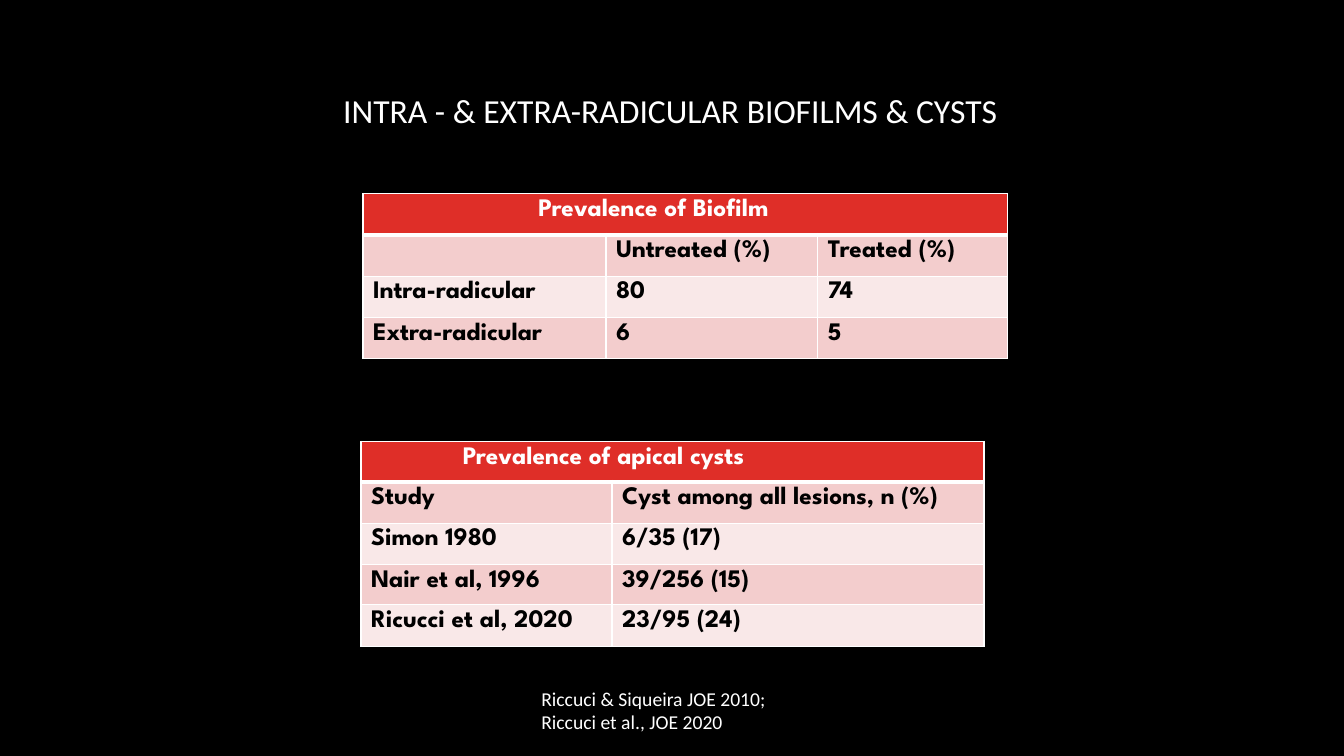
"""Build the slide on the prevalence of biofilms and apical cysts."""
from lxml import etree
from pptx import Presentation
from pptx.dml.color import RGBColor
from pptx.enum.text import MSO_ANCHOR, PP_ALIGN
from pptx.oxml.ns import qn
from pptx.util import Inches, Pt

MIDDLE, LEFT, RIGHT = MSO_ANCHOR.MIDDLE, PP_ALIGN.LEFT, PP_ALIGN.RIGHT
WHITE, BLACK, RED = "FFFFFF", "000000", "DF2E28"
BANDS = ["F3CDCD", "F9E8E8"]
TALL, SHORT = 0.41, 0.33
THIN, THICK = 1, 3


def color(hex_code):
    return RGBColor.from_string(hex_code)


def write(paragraph, text, size, font, hex_code, bold=False):
    run = paragraph.add_run()
    run.text = text
    run.font.size = Pt(size)
    run.font.name = font
    run.font.bold = bold
    run.font.color.rgb = color(hex_code)


prs = Presentation()
prs.slide_width, prs.slide_height = Inches(13.33), Inches(7.5)
slide = prs.slides.add_slide(prs.slide_layouts[6])
slide.background.fill.solid()
slide.background.fill.fore_color.rgb = color(BLACK)

captions = [
    ((3.25, 0.79, 6.74, 0.61), 24, RIGHT, True,
     ["INTRA - & EXTRA-RADICULAR BIOFILMS & CYSTS"]),
    ((5.27, 6.76, 2.45, 0.57), 14, LEFT, False,
     ["Riccuci & Siqueira JOE 2010;", "Riccuci et al., JOE 2020"]),
]
for box, size, alignment, wraps, lines in captions:
    frame = slide.shapes.add_textbox(*map(Inches, box)).text_frame
    frame.word_wrap = wraps
    frame.vertical_anchor = MIDDLE
    for index, line in enumerate(lines):
        paragraph = frame.add_paragraph() if index else frame.paragraphs[0]
        paragraph.alignment = alignment
        write(paragraph, line, size, "Calibri", WHITE)

prevalences = [
    (3.6, 1.92, [2.41, 2.1, 1.65], [TALL] * 4, 1.74, [
        ["Prevalence of Biofilm", "", ""],
        ["", "Untreated (%)", "Treated (%)"],
        ["Intra-radicular", "80", "74"],
        ["Extra-radicular", "6", "5"],
    ]),
    (3.58, 4.38, [2.49, 3.69], [SHORT, TALL, TALL, SHORT, TALL], 1.01, [
        ["Prevalence of apical cysts", ""],
        ["Study", "Cyst among all lesions, n (%)"],
        ["Simon 1980", "6/35 (17)"],
        ["Nair et al, 1996", "39/256 (15)"],
        ["Ricucci et al, 2020", "23/95 (24)"],
    ]),
]
for left, top, widths, heights, heading_indent, rows in prevalences:
    table = slide.shapes.add_table(
        len(rows), len(widths), Inches(left), Inches(top),
        Inches(sum(widths)), Inches(sum(heights))).table
    for column, width in zip(table.columns, widths):
        column.width = Inches(width)
    for row, height in zip(table.rows, heights):
        row.height = Inches(height)
    table.cell(0, 0).merge(table.cell(0, len(widths) - 1))
    table.cell(0, 0).margin_left = Inches(heading_indent)

    for r, texts in enumerate(rows):
        for c, text in enumerate(texts):
            cell = table.cell(r, c)
            properties = cell._tc.get_or_add_tcPr()
            for side in "LRTB":
                thick = (r, side) in [(0, "B"), (1, "T")]
                border = etree.SubElement(properties, qn(f"a:ln{side}"),
                                          w=str(Pt(THICK if thick else THIN)))
                line_fill = etree.SubElement(border, qn("a:solidFill"))
                etree.SubElement(line_fill, qn("a:srgbClr"), val=WHITE)
            cell.fill.solid()
            cell.fill.fore_color.rgb = color(BANDS[(r - 1) % 2] if r else RED)
            if text:
                write(cell.text_frame.paragraphs[0], text, 18,
                      "League Spartan", BLACK if r else WHITE, True)

prs.save("out.pptx")
